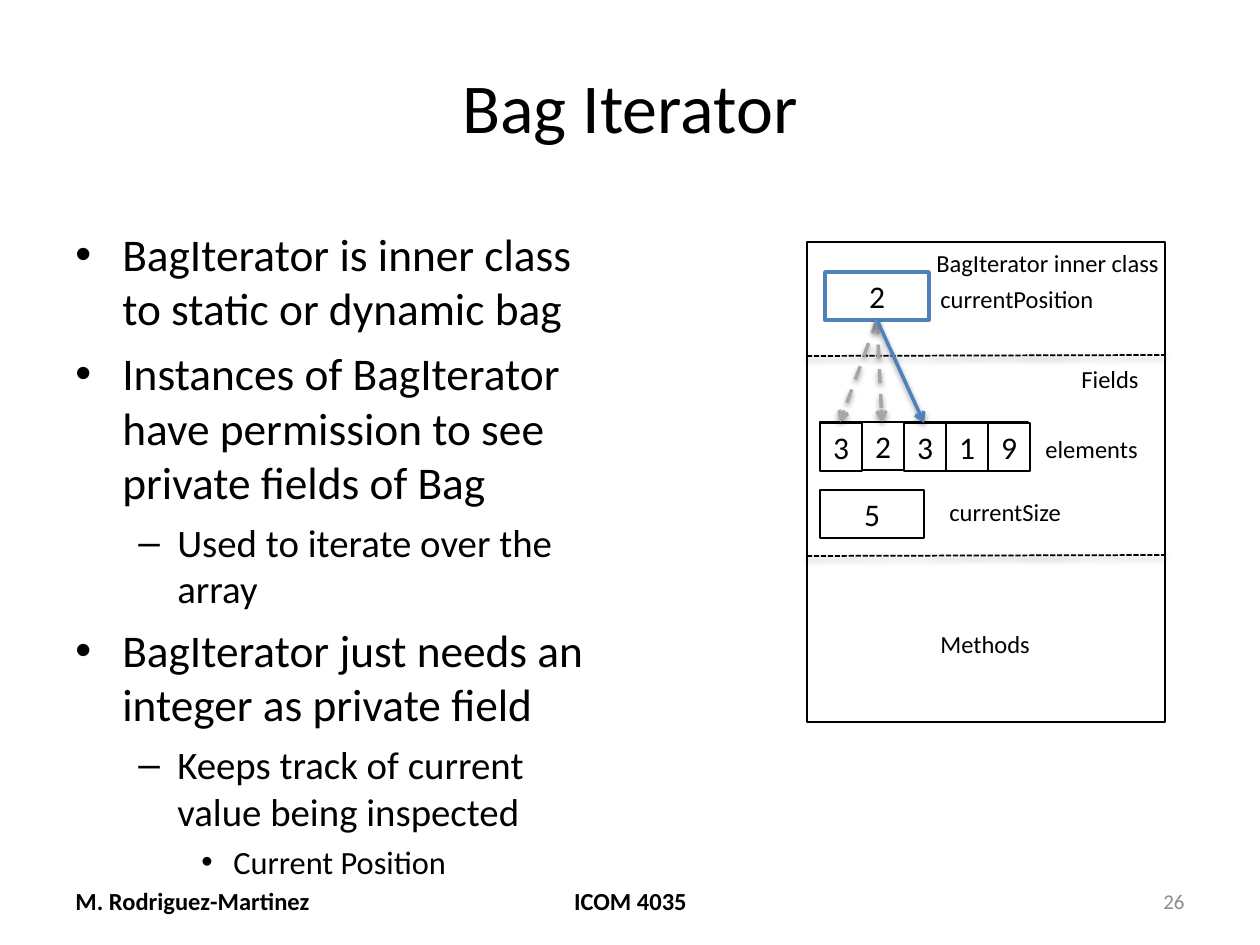
from lxml import etree
from pptx import Presentation
from pptx.dml.color import RGBColor
from pptx.enum.dml import MSO_LINE
from pptx.enum.shapes import MSO_CONNECTOR, MSO_SHAPE
from pptx.enum.text import MSO_ANCHOR, PP_ALIGN
from pptx.oxml import parse_xml
from pptx.oxml.ns import nsdecls, qn
from pptx.util import Emu, Pt

LEFT, CENTER, RIGHT = PP_ALIGN.LEFT, PP_ALIGN.CENTER, PP_ALIGN.RIGHT
TOP, MIDDLE = MSO_ANCHOR.TOP, MSO_ANCHOR.MIDDLE
RECTANGLE, STRAIGHT = MSO_SHAPE.RECTANGLE, MSO_CONNECTOR.STRAIGHT
DASH, SHORT_DASH = MSO_LINE.DASH, MSO_LINE.SQUARE_DOT
PX = 914400 / 126
FONT = "Calibri"
COLORS = {"black": "000000", "white": "FFFFFF", "blue": "4F81BD",
          "gray": "A6A6A6", "number": "8C8C8C"}

deck = Presentation()
deck.slide_width, deck.slide_height = Emu(9144000), Emu(6858000)
page = deck.slides.add_slide(deck.slide_layouts[6])


def px(*lengths):
    return [Emu(round(length * PX)) for length in lengths]


def write(box, text, size, align=LEFT, anchor=TOP, color="black", bold=False, wrap=True):
    frame = box.text_frame
    frame.word_wrap = wrap
    frame.vertical_anchor = anchor
    para = frame.paragraphs[0]
    para.alignment = align
    span = para.add_run()
    span.text = text
    span.font.name = FONT
    span.font.size = Pt(size)
    span.font.bold = bold
    span.font.color.rgb = RGBColor.from_string(COLORS[color])


headings = [
    ("Bag Iterator", (63, 38, 1134, 135), 40, CENTER, "black", False),
    ("M. Rodriguez-Martinez", (63, 876, 294, 50), 14, LEFT, "black", True),
    ("ICOM 4035", (431, 876, 399, 50), 14, CENTER, "black", True),
    ("26", (903, 876, 294, 50), 12, RIGHT, "number", False),
]
for text, place, size, align, color, bold in headings:
    write(page.shapes.add_textbox(*px(*place)), text, size, align, MIDDLE, color, bold)

levels = [
    {"size": 25.9, "left": 47, "hang": 47, "before": 6, "bullet": "•"},
    {"size": 22.2, "left": 102, "hang": 39, "before": 5.5, "bullet": "–"},
    {"size": 18.5, "left": 158, "hang": 32, "before": 4.5, "bullet": "•"},
]
points = [
    (0, "BagIterator is inner class to static or dynamic bag"),
    (0, "Instances of BagIterator have permission to see private fields of Bag"),
    (1, "Used to iterate over the array"),
    (0, "BagIterator just needs an integer as private field"),
    (1, "Keeps track of current value being inspected"),
    (2, "Current Position"),
]
body = page.shapes.add_textbox(*px(63, 220, 557, 633)).text_frame
body.word_wrap = True
for index, (level, text) in enumerate(points):
    style = levels[level]
    para = body.add_paragraph() if index else body.paragraphs[0]
    para.level = level
    para.space_before = Pt(style["before"])
    left, hang = px(style["left"], style["hang"])
    properties = para._p.get_or_add_pPr()
    properties.set("marL", str(left))
    properties.set("indent", str(-hang))
    etree.SubElement(properties, qn("a:buFont")).set("typeface", "Arial")
    etree.SubElement(properties, qn("a:buChar")).set("char", style["bullet"])
    span = para.add_run()
    span.text = text
    span.font.name = FONT
    span.font.size = Pt(style["size"])
    span.font.color.rgb = RGBColor.from_string(COLORS["black"])

boxes = [
    ("", (807, 242, 358, 480), "black", 0.75),
    ("", (820, 422, 208, 48), "black", 0.75),
    ("5", (820, 490, 104, 48), "black", 0.75),
    ("2", (825, 272, 104, 48), "blue", 2),
]
for index, value in enumerate("32319"):
    top = 422 if index == 1 else 423
    boxes.append((value, (820 + 42 * index, top, 42, 48), "black", 0.75))
for text, place, color, width in boxes:
    box = page.shapes.add_shape(RECTANGLE, *px(*place))
    box.shadow.inherit = False
    box.fill.solid()
    box.fill.fore_color.rgb = RGBColor.from_string(COLORS["white"])
    box.line.color.rgb = RGBColor.from_string(COLORS[color])
    box.line.width = Pt(width)
    if text:
        write(box, text, 18, CENTER, MIDDLE)

labels = [
    ("BagIterator inner class", 924, 242, 250),
    ("currentPosition", 928, 278, 180),
    ("Fields", 1069, 358, 83),
    ("elements", 1033, 428, 118),
    ("currentSize", 937, 491, 139),
    ("Methods", 928, 623, 116),
]
for text, left, top, width in labels:
    write(page.shapes.add_textbox(*px(left, top, width, 43)), text, 14, wrap=False)

lines = [
    ((807, 556, 1165, 555), "black", 1, SHORT_DASH, False),
    ((807, 356, 1165, 355), "black", 1, SHORT_DASH, False),
    ((877, 320, 840, 422), "gray", 2, DASH, True),
    ((877, 320, 882, 422), "gray", 2, DASH, True),
    ((877, 320, 924, 423), "blue", 2, None, True),
]
for ends, color, width, dash, arrow in lines:
    line = page.shapes.add_connector(STRAIGHT, *px(*ends))
    line.line.color.rgb = RGBColor.from_string(COLORS[color])
    line.line.width = Pt(width)
    if dash:
        line.line.dash_style = dash
    if arrow:
        tail = etree.SubElement(line.line._get_or_add_ln(), qn("a:tailEnd"))
        tail.set("type", "arrow")
    line._element.spPr.append(parse_xml(
        f'<a:effectLst {nsdecls("a")}><a:outerShdw blurRad="40000" dist="20000" '
        'dir="5400000" rotWithShape="0"><a:srgbClr val="000000">'
        '<a:alpha val="38000"/></a:srgbClr></a:outerShdw></a:effectLst>'))

deck.save("out.pptx")
